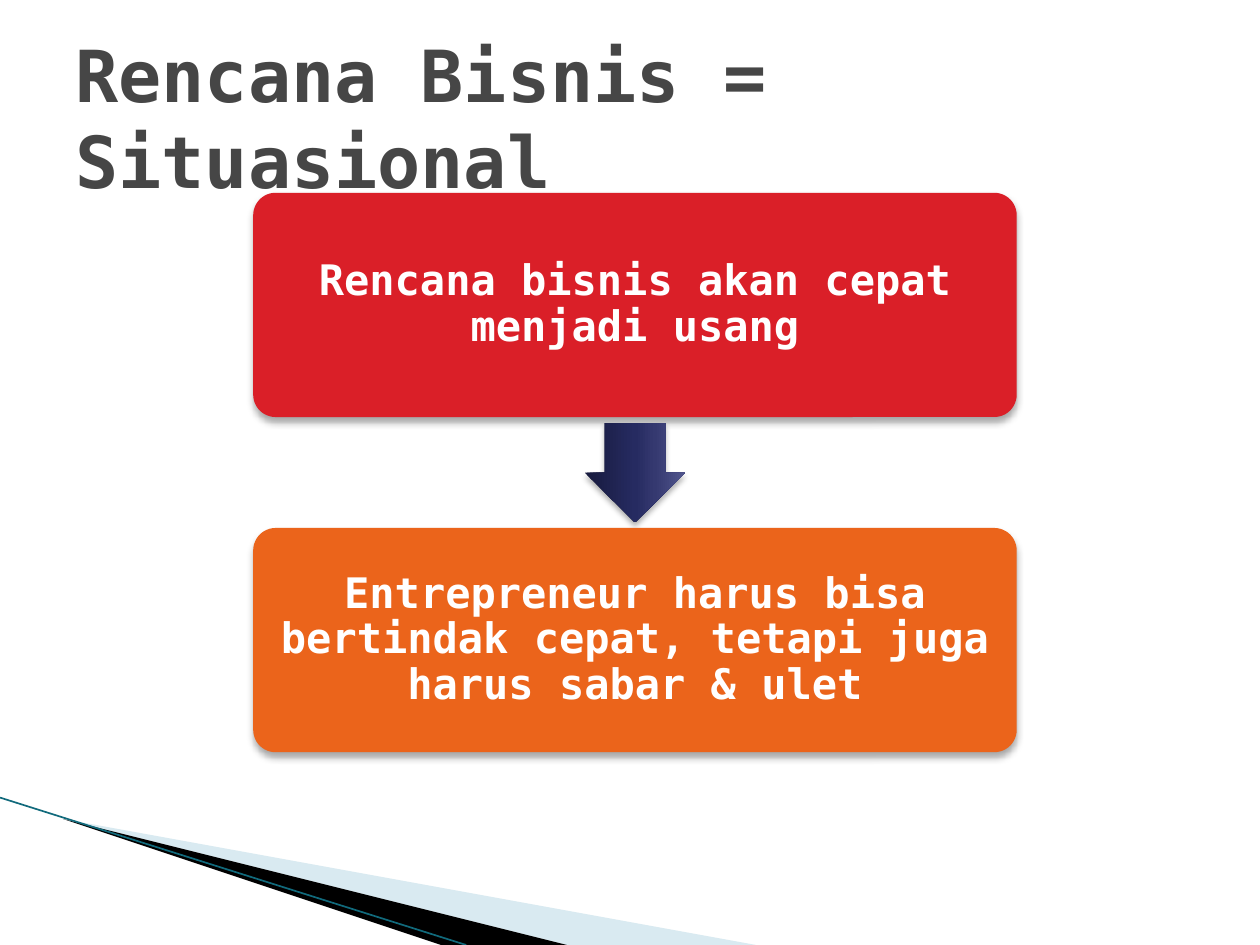
from typing import NamedTuple

from lxml import etree
from pptx import Presentation
from pptx.dml.color import RGBColor
from pptx.enum.shapes import MSO_CONNECTOR, MSO_SHAPE
from pptx.enum.text import MSO_ANCHOR, PP_ALIGN
from pptx.oxml.ns import qn
from pptx.util import Emu, Inches, Pt

ROUND, ARROW = MSO_SHAPE.ROUNDED_RECTANGLE, MSO_SHAPE.RIGHT_ARROW
STRAIGHT = MSO_CONNECTOR.STRAIGHT
MIDDLE = MSO_ANCHOR.MIDDLE
LEFT, CENTER = PP_ALIGN.LEFT, PP_ALIGN.CENTER
FONT = "DejaVu Sans Mono"
COLS, ROWS = 20, 15
CELL = Inches(10) // COLS


class Step(NamedTuple):
    """A coloured step, placed by its grid row."""
    row: float
    fill: str
    text: str


class Wedge(NamedTuple):
    """A corner wedge with its points in grid cells."""
    points: list[tuple[float, float]]
    fill: str
    alpha: int


STEP_COL, STEP_WIDE, STEP_HIGH = 4.02, 12.12, 3.56
STEPS = [
    Step(3.06, "DA1F28", "Rencana bisnis akan cepat menjadi usang"),
    Step(8.38, "EB641B", "Entrepreneur harus bisa bertindak cepat, "
         "tetapi juga harus sabar & ulet"),
]
WEDGES = [
    Wedge([(1.1, 13.02), (11.9, 15.02), (9.12, 15.02), (1.1, 13)], "A0CBDC", 40),
    Wedge([(1.06, 12.98), (9.14, 15.02), (7.44, 15.04), (1.08, 13)], "000000", 100),
]
STOPS = [(0, "171A3D"), (50, "262B61"), (70, "353970"), (100, "51568D")]


def grid(*cells: float) -> list[Emu]:
    """Turn grid cells into lengths."""
    return [Emu(round(cell * CELL)) for cell in cells]


def tint(color, code: str) -> None:
    """Set a colour from a hex string."""
    color.rgb = RGBColor.from_string(code)


def add_tag(parent, tag: str, **attrs):
    """Add a drawing element under a parent."""
    return etree.SubElement(parent, qn(tag), {k: str(v) for k, v in attrs.items()})


def paint(shape, code: str) -> None:
    """Give a shape a plain fill with no line or shadow."""
    shape.fill.solid()
    tint(shape.fill.fore_color, code)
    shape.line.fill.background()
    shape.shadow.inherit = False


def cast(shape, alpha: int, blur: float, dist: float) -> None:
    """Cast a black shadow straight down."""
    shape.shadow.inherit = False
    effect = shape._element.spPr.find(qn("a:effectLst"))
    shade = add_tag(effect, "a:outerShdw", blurRad=Pt(blur), dist=Pt(dist),
                    dir=90 * 60000, rotWithShape=0)
    color = add_tag(shade, "a:srgbClr", val="000000")
    add_tag(color, "a:alpha", val=alpha * 1000)


def write(frame, text: str, size: float, code: str, align) -> None:
    """Write one bold paragraph, centred in height."""
    frame.word_wrap = True
    frame.vertical_anchor = MIDDLE
    frame.text = text
    para = frame.paragraphs[0]
    para.alignment = align
    font = para.runs[0].font
    font.name, font.size, font.bold = FONT, Pt(size), True
    tint(font.color, code)


def draw_wedge(shapes, wedge: Wedge) -> None:
    """Draw one corner wedge."""
    first, *rest = wedge.points
    pen = shapes.build_freeform(*first, scale=CELL)
    pen.add_line_segments(rest, close=True)
    shape = pen.convert_to_shape()
    paint(shape, wedge.fill)
    if wedge.alpha < 100:
        color = shape._element.spPr.find(qn("a:solidFill"))[0]
        add_tag(color, "a:alpha", val=wedge.alpha * 1000)


def draw_edge(shapes) -> None:
    """Draw the thin line along the corner wedges."""
    line = shapes.add_connector(STRAIGHT, *grid(0, 12.66, 7.4, 15))
    tint(line.line.color, "116A7C")
    line.line.width = Pt(0.95)
    add_tag(line._element.spPr, "a:effectLst")


def draw_step(shapes, step: Step) -> None:
    """Draw one rounded step with its text."""
    shape = shapes.add_shape(
        ROUND, *grid(STEP_COL, step.row, STEP_WIDE, STEP_HIGH))
    shape.adjustments[0] = 0.1
    paint(shape, step.fill)
    cast(shape, 35, 4, 3)
    frame = shape.text_frame
    frame.margin_left = frame.margin_right = Inches(0.05)
    frame.margin_top = frame.margin_bottom = Inches(0.05)
    write(frame, step.text, 24, "FFFFFF", CENTER)
    frame.paragraphs[0].line_spacing = 0.9


def draw_arrow(shapes) -> None:
    """Draw the shaded arrow midway between the steps."""
    wide, high = 1.58, 1.6
    mid = (STEPS[0].row + STEP_HIGH + STEPS[1].row) / 2
    left = STEP_COL + (STEP_WIDE - wide) / 2
    shape = shapes.add_shape(ARROW, *grid(left, mid - high / 2, wide, high))
    shape.rotation = 90
    shape.adjustments[0], shape.adjustments[1] = 0.6, 0.5
    shape.line.fill.background()
    shape.fill.gradient()
    shape.fill.gradient_angle = 90
    stops = shape._element.spPr.find(qn("a:gradFill")).find(qn("a:gsLst"))
    for stop in list(stops):
        stops.remove(stop)
    for pos, code in STOPS:
        stop = add_tag(stops, "a:gs", pos=pos * 1000)
        add_tag(stop, "a:srgbClr", val=code)
    cast(shape, 32, 3.5, 2.2)


def main() -> None:
    """Build and save the slide."""
    deck = Presentation()
    deck.slide_width, deck.slide_height = grid(COLS, ROWS)
    shapes = deck.slides.add_slide(deck.slide_layouts[6]).shapes
    for wedge in WEDGES:
        draw_wedge(shapes, wedge)
    draw_edge(shapes)
    title = shapes.add_textbox(*grid(1, 0.6, 18, 2.5))
    write(title.text_frame, "Rencana Bisnis = Situasional", 41, "464646", LEFT)
    draw_step(shapes, STEPS[0])
    draw_arrow(shapes)
    draw_step(shapes, STEPS[1])
    deck.save("out.pptx")


if __name__ == "__main__":
    main()
